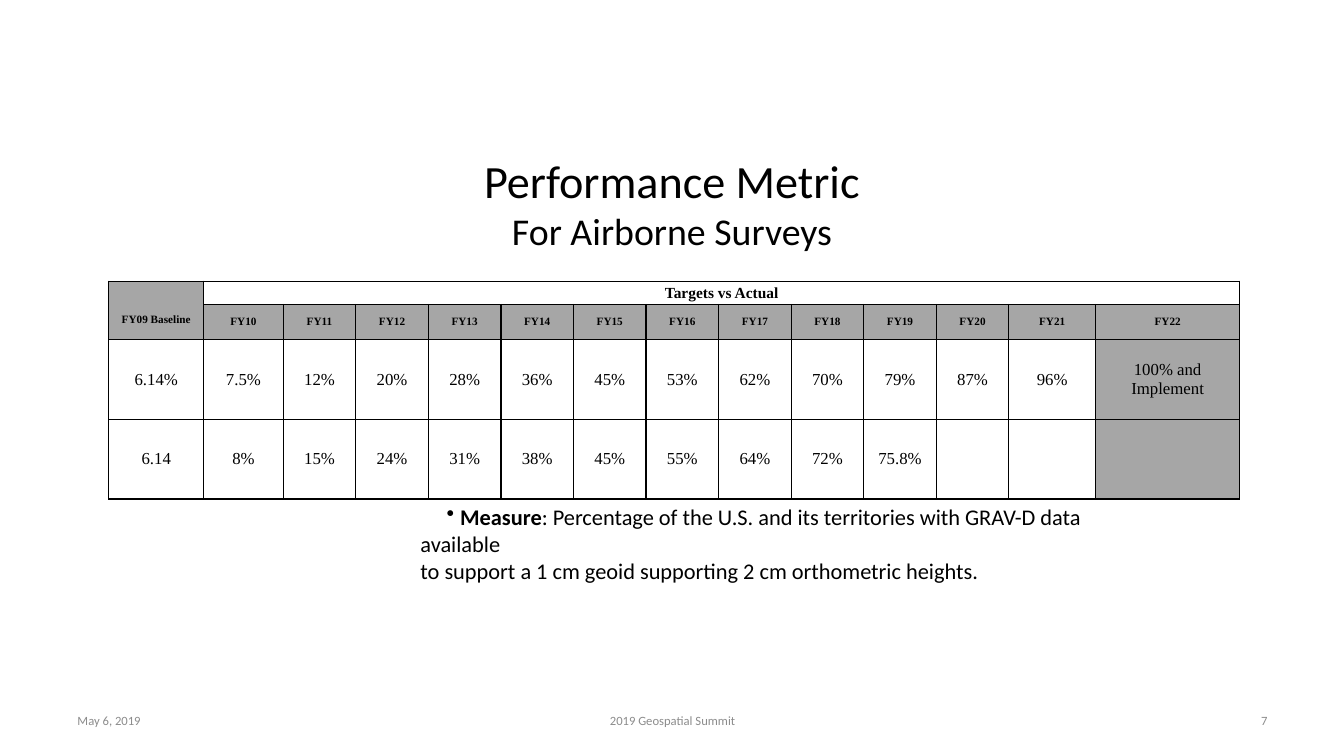
from lxml import etree
from pptx import Presentation
from pptx.dml.color import RGBColor
from pptx.enum.text import MSO_ANCHOR, PP_ALIGN
from pptx.oxml.ns import qn
from pptx.util import Inches, Pt

BLACK, WHITE, GREY, FOOTER_GREY = "000000", "FFFFFF", "A6A6A6", "8C8C8C"
SANS, SERIF = "Calibri", "Times New Roman"

TITLE = ("Performance Metric", "For Airborne Surveys")
BASELINE, SPAN_HEADING = "FY09 Baseline", "Targets vs Actual"
YEARS = [f"FY{year}" for year in range(10, 23)]
TARGETS = ["6.14%", "7.5%", "12%", "20%", "28%", "36%", "45%", "53%", "62%",
           "70%", "79%", "87%", "96%", "100% and Implement"]
ACTUALS = ["6.14", "8%", "15%", "24%", "31%", "38%", "45%", "55%", "64%",
           "72%", "75.8%", "", "", ""]
COLUMN_WIDTHS = [0.94, 0.79] + [0.72] * 10 + [0.86, 1.43]
ROW_HEIGHTS = [0.23, 0.35, 0.79, 0.79]
MEASURE = [" ", "Measure",
           ": Percentage of the U.S. and its territories with GRAV-D data available"]
MEASURE_END = "to support a 1 cm geoid supporting 2 cm orthometric heights."
FOOTERS = [
    (0.67, 3.11, "May 6, 2019", PP_ALIGN.LEFT),
    (4.56, 4.22, "2019 Geospatial Summit", PP_ALIGN.CENTER),
    (9.56, 3.11, "7", PP_ALIGN.RIGHT),
]


def rgb(value):
    return RGBColor.from_string(value)


def style(r, size, name=SANS, color=BLACK, bold=False):
    r.font.size, r.font.name, r.font.bold = Pt(size), name, bold
    r.font.color.rgb = rgb(color)


def add_box(s, left, top, width, height, anchor=MSO_ANCHOR.MIDDLE):
    tf = s.shapes.add_textbox(*map(Inches, (left, top, width, height))).text_frame
    tf.word_wrap = True
    tf.vertical_anchor = anchor
    return tf


def add_borders(cell):
    tcPr = cell._tc.get_or_add_tcPr()
    for side in ("a:lnL", "a:lnR", "a:lnT", "a:lnB"):
        ln = etree.SubElement(tcPr, qn(side), w=str(Pt(1)))
        fill = etree.SubElement(ln, qn("a:solidFill"))
        etree.SubElement(fill, qn("a:srgbClr"), val=BLACK)


def add_title(s):
    p = add_box(s, 3.29, 1.54, 6.75, 0.94).paragraphs[0]
    p.text = "\v".join(TITLE)
    p.alignment = PP_ALIGN.CENTER
    for r, size in zip(p.runs, (33, 27)):
        style(r, size)


def add_measure(s):
    tf = add_box(s, 3.85, 4.95, 7.61, 0.88, MSO_ANCHOR.TOP)
    tf.margin_left, tf.margin_right = Inches(0.32), Inches(0.4)
    tf.margin_top = tf.margin_bottom = Inches(0.04)
    p = tf.paragraphs[0]
    pPr = p._p.get_or_add_pPr()
    pPr.set("marL", "0")
    pPr.set("indent", str(Inches(0.26)))
    etree.SubElement(pPr, qn("a:buChar"), char="•")
    for text, name, bold in zip(MEASURE, (SERIF, SANS, SANS), (True, True, False)):
        r = p.add_run()
        r.text = text
        style(r, 16, name, bold=bold)
    p = tf.add_paragraph()
    p.text = MEASURE_END
    style(p.runs[0], 16)


def add_metric_table(s):
    rows = [[BASELINE, SPAN_HEADING] + [""] * 12, [""] + YEARS, TARGETS, ACTUALS]
    last = len(COLUMN_WIDTHS) - 1
    table = s.shapes.add_table(len(rows), last + 1, Inches(1.08), Inches(2.79),
                               Inches(11.24), Inches(sum(ROW_HEIGHTS))).table
    table.first_row = table.horz_banding = False
    for column, width in zip(table.columns, COLUMN_WIDTHS):
        column.width = Inches(width)
    for row, height in zip(table.rows, ROW_HEIGHTS):
        row.height = Inches(height)
    for i, row in enumerate(rows):
        for j, text in enumerate(row):
            cell = table.cell(i, j)
            add_borders(cell)
            shaded = i == 1 or (i == 0 and j == 0) or (i > 1 and j == last)
            cell.fill.solid()
            cell.fill.fore_color.rgb = rgb(GREY if shaded else WHITE)
            cell.margin_left = cell.margin_right = Inches(0.04)
            cell.margin_top = cell.margin_bottom = 0
            cell.vertical_anchor = MSO_ANCHOR.MIDDLE
            p = cell.text_frame.paragraphs[0]
            p.alignment = PP_ALIGN.CENTER
            if text:
                p.text = text
                size = 12 if i > 1 else 11 if text == SPAN_HEADING else 8
                style(p.runs[0], size, SERIF, bold=i < 2)
    table.cell(0, 0).merge(table.cell(1, 0))
    table.cell(0, 0).margin_top = Inches(0.18)
    table.cell(0, 1).merge(table.cell(0, last))


def add_footers(s):
    for left, width, text, alignment in FOOTERS:
        p = add_box(s, left, 6.95, width, 0.4).paragraphs[0]
        p.text = text
        p.alignment = alignment
        style(p.runs[0], 9, color=FOOTER_GREY)


def main():
    prs = Presentation()
    prs.slide_width, prs.slide_height = Inches(13.33), Inches(7.5)
    s = prs.slides.add_slide(prs.slide_layouts[6])
    add_title(s)
    add_measure(s)
    add_metric_table(s)
    add_footers(s)
    prs.save("out.pptx")


if __name__ == "__main__":
    main()
